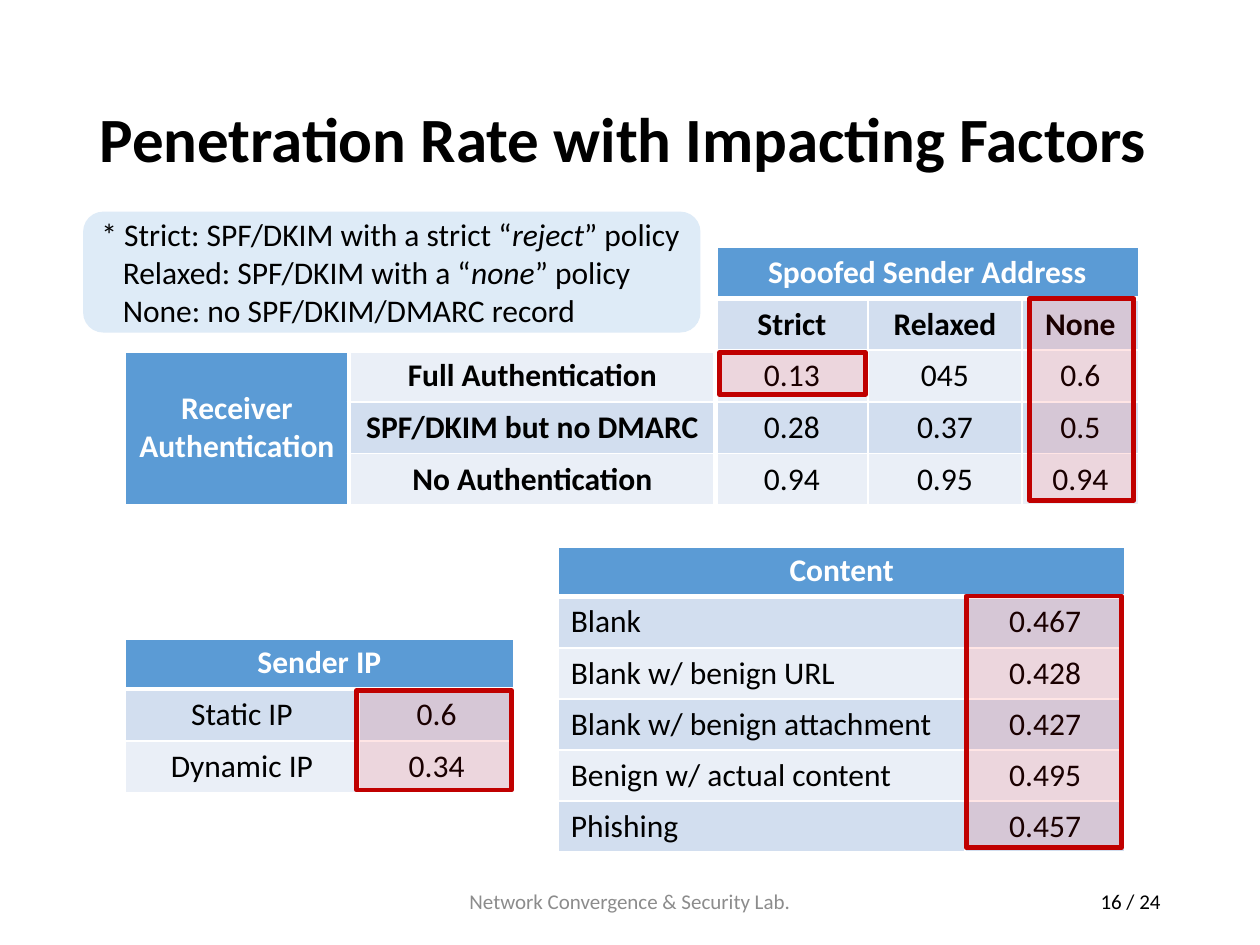
from lxml import etree
from pptx import Presentation
from pptx.dml.color import RGBColor
from pptx.enum.shapes import MSO_SHAPE
from pptx.enum.text import MSO_ANCHOR, PP_ALIGN
from pptx.oxml.ns import qn
from pptx.util import Inches, Pt

LEFT, CENTER, RIGHT = PP_ALIGN.LEFT, PP_ALIGN.CENTER, PP_ALIGN.RIGHT
TOP, MIDDLE = MSO_ANCHOR.TOP, MSO_ANCHOR.MIDDLE
RECT, ROUNDED = MSO_SHAPE.RECTANGLE, MSO_SHAPE.ROUNDED_RECTANGLE

FONT = "Calibri"
BLACK, WHITE, GREY = "000000", "FFFFFF", "8C8C8C"
HEADER, BANDS = "5B9BD5", ("D2DEEF", "EAEFF7")
NOTE_FILL, MARK_FILL, MARK_LINE = "DEEBF7", "FF0000", "C00000"
THIN, THICK = 1, 3

TITLE = "Penetration Rate with Impacting Factors"

# Each note line: text before, emphasised word, text after
NOTE = [
    ("* Strict: SPF/DKIM with a strict “", "reject", "” policy"),
    ("Relaxed: SPF/DKIM with a “", "none", "” policy"),
    ("None: no SPF/DKIM/DMARC record", "", ""),
]
NOTE_INDENT = 0.17

# merges: (first row, first column, last row, last column)
# heads: white on blue; bold: black labels; blank: no fill
TABLES = [
    dict(
        at=(0.99, 1.96), cols=[1.78, 2.91, 1.21, 1.22, 0.93], row=0.41,
        rows=[
            ["", "", "Spoofed Sender Address", "", ""],
            ["", "", "Strict", "Relaxed", "None"],
            ["Receiver\nAuthentication", "Full Authentication", "0.13", "045", "0.6"],
            ["", "SPF/DKIM but no DMARC", "0.28", "0.37", "0.5"],
            ["", "No Authentication", "0.94", "0.95", "0.94"],
        ],
        merges=[(0, 0, 1, 1), (0, 2, 0, 4), (2, 0, 4, 0)],
        bold=[(1, 2), (1, 3), (1, 4), (2, 1), (3, 1), (4, 1)],
        label_cols=2, label_rows=2, first_align=CENTER, anchor=MIDDLE,
    ),
    dict(
        at=(0.99, 5.06), cols=[1.86, 1.23], row=0.41,
        rows=[["Sender IP", ""], ["Static IP", "0.6"], ["Dynamic IP", "0.34"]],
        merges=[(0, 0, 0, 1)], bold=[],
        label_cols=0, label_rows=0, first_align=CENTER, anchor=TOP,
    ),
    dict(
        at=(4.43, 4.33), cols=[3.23, 1.27], row=0.4,
        rows=[
            ["Content", ""],
            ["Blank", "0.467"],
            ["Blank w/ benign URL", "0.428"],
            ["Blank w/ benign attachment", "0.427"],
            ["Benign w/ actual content", "0.495"],
            ["Phishing", "0.457"],
        ],
        merges=[(0, 0, 0, 1)], bold=[],
        label_cols=0, label_rows=0, first_align=LEFT, anchor=TOP,
    ),
]

HIGHLIGHTS = [
    (5.71, 2.8, 1.16, 0.33),
    (8.17, 2.37, 0.83, 1.6),
    (2.83, 5.48, 1.23, 0.79),
    (7.67, 4.73, 1.23, 2),
]

FOOTERS = [
    ("Network Convergence & Security Lab.", (3.31, 6.95, 3.38, 0.4), CENTER, GREY),
    ("16 / 24", (7.06, 6.95, 2.25, 0.4), RIGHT, BLACK),
]


def rgb(value):
    return RGBColor.from_string(value)


def inches(box):
    return [Inches(v) for v in box]


def style(tf, size, color, align, bold=False):
    for p in tf.paragraphs:
        p.alignment = align
        p.font.name, p.font.size = FONT, Pt(size)
        p.font.bold, p.font.color.rgb = bold, rgb(color)


def add_box(s, kind, box, fill):
    sp = s.shapes.add_shape(kind, *inches(box))
    sp.shadow.inherit = False
    sp.fill.solid()
    sp.fill.fore_color.rgb = rgb(fill)
    return sp


def set_borders(cell, **widths):
    """Draw white cell borders, with widths in points by side: L, R, T, B."""
    pr = cell._tc.get_or_add_tcPr()
    for i, side in enumerate("LRTB"):
        ln = etree.Element(qn(f"a:ln{side}"), w=str(Pt(widths[side])))
        fill = etree.SubElement(ln, qn("a:solidFill"))
        etree.SubElement(fill, qn("a:srgbClr"), val=WHITE)
        pr.insert(i, ln)


def add_table(s, t):
    cols, rows = t["cols"], t["rows"]
    size = (sum(cols), t["row"] * len(rows))
    table = s.shapes.add_table(len(rows), len(cols), *inches(t["at"] + size)).table
    table.first_row = table.horz_banding = False
    for col, width in zip(table.columns, cols):
        col.width = Inches(width)
    for row in table.rows:
        row.height = Inches(t["row"])
    for r1, c1, r2, c2 in t["merges"]:
        table.cell(r1, c1).merge(table.cell(r2, c2))

    heads = [m[:2] for m in t["merges"]]
    thick_rows, thick_cols = {1, t["label_rows"]}, {1, t["label_cols"]}
    if not t["label_cols"]:
        thick_cols = set()
    for r, texts in enumerate(rows):
        for c, text in enumerate(texts):
            cell = table.cell(r, c)
            head = (r, c) in heads
            if r < t["label_rows"] and c < t["label_cols"]:
                cell.fill.background()
            else:
                cell.fill.solid()
                cell.fill.fore_color.rgb = rgb(HEADER if head else BANDS[(r + 1) % 2])
            cell.vertical_anchor = t["anchor"]
            cell.text = text
            style(cell.text_frame, 18, WHITE if head else BLACK,
                  t["first_align"] if c == 0 and not head else CENTER,
                  head or (r, c) in t["bold"])
            # Rules below the headers and beside the labels are thicker
            top_rows = thick_rows if c < max(t["label_cols"], 1) or r < 2 else {1}
            set_borders(cell,
                        L=THICK if c in thick_cols else THIN,
                        R=THICK if c + 1 in thick_cols else THIN,
                        T=THICK if r in top_rows else THIN,
                        B=THICK if r + 1 in top_rows and (r == 0 or c < t["label_cols"])
                        else THIN)


def add_note(s):
    sp = add_box(s, ROUNDED, (0.66, 1.68, 4.9, 0.96), NOTE_FILL)
    sp.line.fill.background()
    tf = sp.text_frame
    tf.vertical_anchor = MIDDLE
    for i, parts in enumerate(NOTE):
        p = tf.add_paragraph() if i else tf.paragraphs[0]
        for text, italic in zip(parts, (False, True, False)):
            if text:
                r = p.add_run()
                r.text, r.font.italic = text, italic
        if i:
            p._p.get_or_add_pPr().set("marL", str(Inches(NOTE_INDENT)))
    style(tf, 18, BLACK, LEFT)


def add_highlight(s, box):
    sp = add_box(s, RECT, box, MARK_FILL)
    color = sp._element.spPr.find(qn("a:solidFill"))[0]
    etree.SubElement(color, qn("a:alpha"), val="10000")
    sp.line.color.rgb = rgb(MARK_LINE)
    sp.line.width = Pt(2.75)


def add_footer(s, text, box, align, color):
    tf = s.shapes.add_textbox(*inches(box)).text_frame
    tf.word_wrap = True
    tf.vertical_anchor = MIDDLE
    tf.text = text
    style(tf, 12, color, align)


def main():
    prs = Presentation()
    prs.slide_width, prs.slide_height = Inches(10), Inches(7.5)
    s = prs.slides.add_slide(prs.slide_layouts[5])

    title = s.shapes.title
    title.left, title.top, title.width, title.height = inches((0.69, 0.4, 8.62, 1.45))
    title.text_frame.text = TITLE
    title.text_frame.vertical_anchor = MIDDLE
    style(title.text_frame, 36, BLACK, LEFT, bold=True)
    title.text_frame.paragraphs[0].line_spacing = 0.9

    add_table(s, TABLES[0])
    add_note(s)
    for t in TABLES[1:]:
        add_table(s, t)
    for box in HIGHLIGHTS:
        add_highlight(s, box)
    for footer in FOOTERS:
        add_footer(s, *footer)
    prs.save("out.pptx")


if __name__ == "__main__":
    main()
